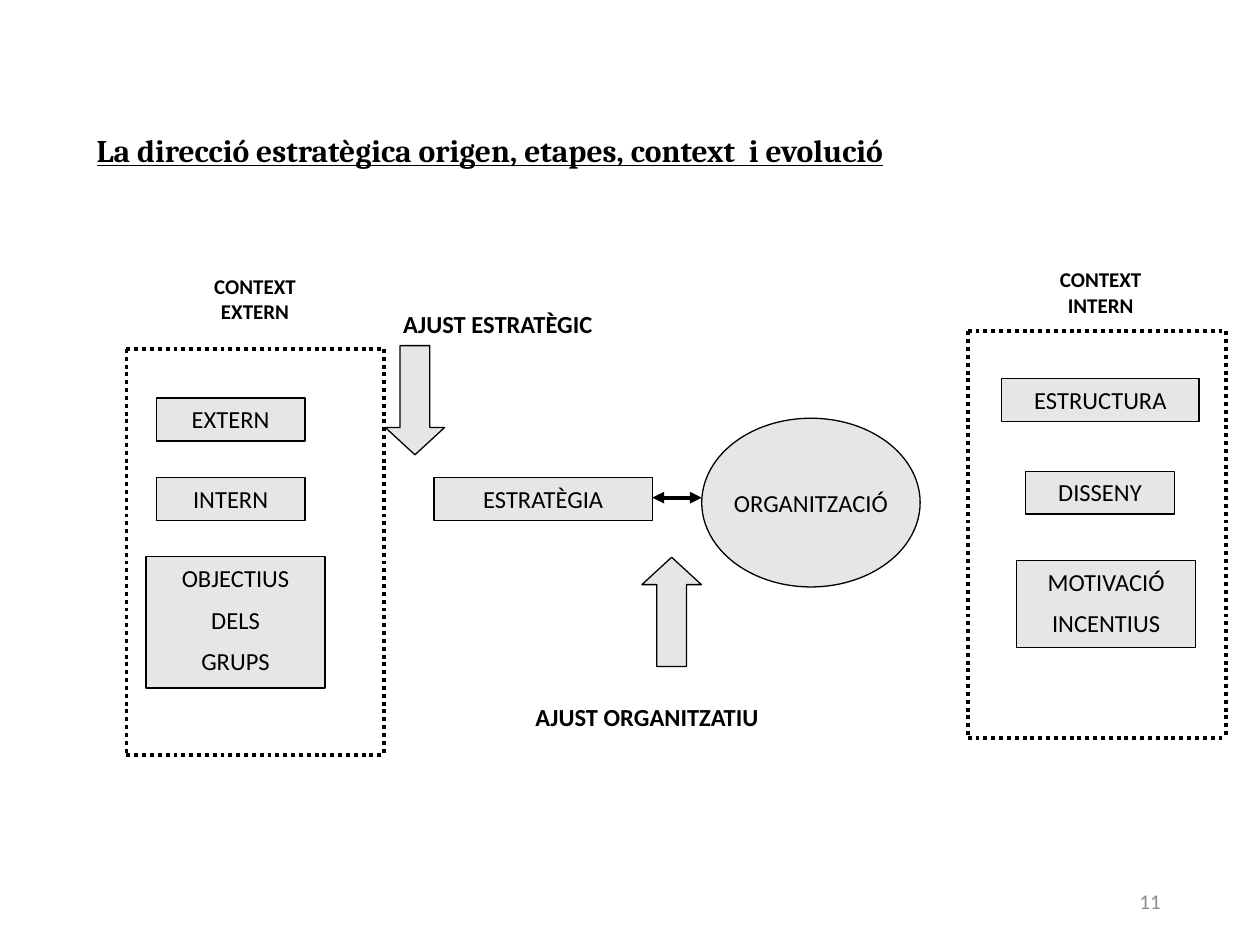
from pptx import Presentation
from pptx.dml.color import RGBColor
from pptx.enum.dml import MSO_LINE
from pptx.enum.shapes import MSO_CONNECTOR, MSO_SHAPE
from pptx.enum.text import MSO_ANCHOR, PP_ALIGN
from pptx.oxml.ns import qn
from pptx.util import Pt
from lxml import etree

BLACK = RGBColor(0x00, 0x00, 0x00)
LIGHT_GREY = RGBColor(0xE7, 0xE6, 0xE6)
NUMBER_GREY = RGBColor(0x8C, 0x8C, 0x8C)

prs = Presentation()
prs.slide_width, prs.slide_height = Pt(720), Pt(540)
slide = prs.slides.add_slide(prs.slide_layouts[6])
shapes = slide.shapes


def write(shape, lines, size=14, bold=False, color=BLACK, font="Calibri",
          align=PP_ALIGN.CENTER, anchor=MSO_ANCHOR.TOP, wrap=True, gap=0):
    frame = shape.text_frame
    frame.word_wrap = wrap
    frame.vertical_anchor = anchor
    frame.text = "\n".join(lines)
    for i, paragraph in enumerate(frame.paragraphs):
        paragraph.alignment = align
        if i and gap:
            paragraph.space_before = Pt(gap)
        paragraph.font.name = font
        paragraph.font.size = Pt(size)
        paragraph.font.bold = bold
        paragraph.font.color.rgb = color
    return frame


def add_line(x1, y1, x2, y2):
    line = shapes.add_connector(MSO_CONNECTOR.STRAIGHT, Pt(x1), Pt(y1), Pt(x2), Pt(y2))
    line.line.color.rgb = BLACK
    line.line.width = Pt(2.25)
    etree.SubElement(line._element.spPr, qn("a:effectLst"))
    return line


# Title
title = shapes.add_textbox(Pt(48.2), Pt(71.3), Pt(601), Pt(28.8))
title_text = write(title, ["La direcció estratègica origen, etapes, context  i evolució"],
                   size=18, bold=True, font="Cambria", align=PP_ALIGN.LEFT)
title_text.paragraphs[0].font.underline = True

# Dotted frames of the two contexts
for left, top in [(72.3, 199.4), (553, 189.4)]:
    right, bottom = left + 147.4, top + 232.3
    for ends in [(left, top, right, top), (left, top, left, bottom),
                 (left, bottom, right, bottom), (right, top, right, bottom)]:
        add_line(*ends).line.dash_style = MSO_LINE.ROUND_DOT

# Boxes, organisation ellipse and fit arrows
RECT, OVAL, ARROW = MSO_SHAPE.RECTANGLE, MSO_SHAPE.OVAL, MSO_SHAPE.RIGHT_ARROW
nodes = [
    (RECT, 89.3, 227.5, 85, 24.5, 0, ["EXTERN"]),
    (RECT, 89.3, 272.9, 85, 24.5, 0, ["INTERN"]),
    (RECT, 83.5, 318.2, 102.2, 75, 0, ["OBJECTIUS", "DELS", "GRUPS"]),
    (RECT, 248, 272.9, 124.8, 24.5, 0, ["ESTRATÈGIA"]),
    (OVAL, 401, 239, 124.8, 96.4, 0, ["ORGANITZACIÓ"]),
    (RECT, 572.4, 216.4, 112.8, 24.5, 0, ["ESTRUCTURA"]),
    (RECT, 586.1, 269.3, 85, 24.5, 0, ["DISSENY"]),
    (RECT, 581, 320.2, 102.2, 49.7, 0, ["MOTIVACIÓ", "INCENTIUS"]),
    (ARROW, 205.9, 211.7, 62.4, 34, 90, []),
    (ARROW, 352.6, 332.6, 62.4, 34, 270, []),
]
for kind, left, top, width, height, turn, lines in nodes:
    node = shapes.add_shape(kind, Pt(left), Pt(top), Pt(width), Pt(height))
    node.shadow.inherit = False
    node.fill.solid()
    node.fill.fore_color.rgb = LIGHT_GREY
    node.line.color.rgb = BLACK
    node.line.width = Pt(0.75)
    node.rotation = turn
    if kind == ARROW:
        node.adjustments[1] = 0.46
    elif kind == OVAL:
        write(node, lines, anchor=MSO_ANCHOR.MIDDLE, wrap=False)
    else:
        write(node, lines, gap=7)

# Two-way link between strategy and organisation
link = add_line(372.8, 284.4, 401, 284.4)
for end in ("a:headEnd", "a:tailEnd"):
    etree.SubElement(link.line._get_or_add_ln(), qn(end), type="triangle")

# Headings
headings = [
    (109.4, 152.6, 72.7, 36, 12, ["CONTEXT", "EXTERN"]),
    (592.6, 149, 72.7, 36, 12, ["CONTEXT", "INTERN"]),
    (223.2, 172.8, 154.8, 24, 14, ["AJUST ESTRATÈGIC"]),
    (298.8, 397.7, 169.9, 24, 14, ["AJUST ORGANITZATIU"]),
]
for left, top, width, height, size, lines in headings:
    heading = shapes.add_textbox(Pt(left), Pt(top), Pt(width), Pt(height))
    align = PP_ALIGN.CENTER if len(lines) > 1 else PP_ALIGN.LEFT
    write(heading, lines, size=size, bold=True, align=align, wrap=False)

# Slide number
number = shapes.add_textbox(Pt(508.3), Pt(500.4), Pt(162), Pt(28.8))
write(number, ["11"], size=12, color=NUMBER_GREY, align=PP_ALIGN.RIGHT,
      anchor=MSO_ANCHOR.MIDDLE)

prs.save("out.pptx")
